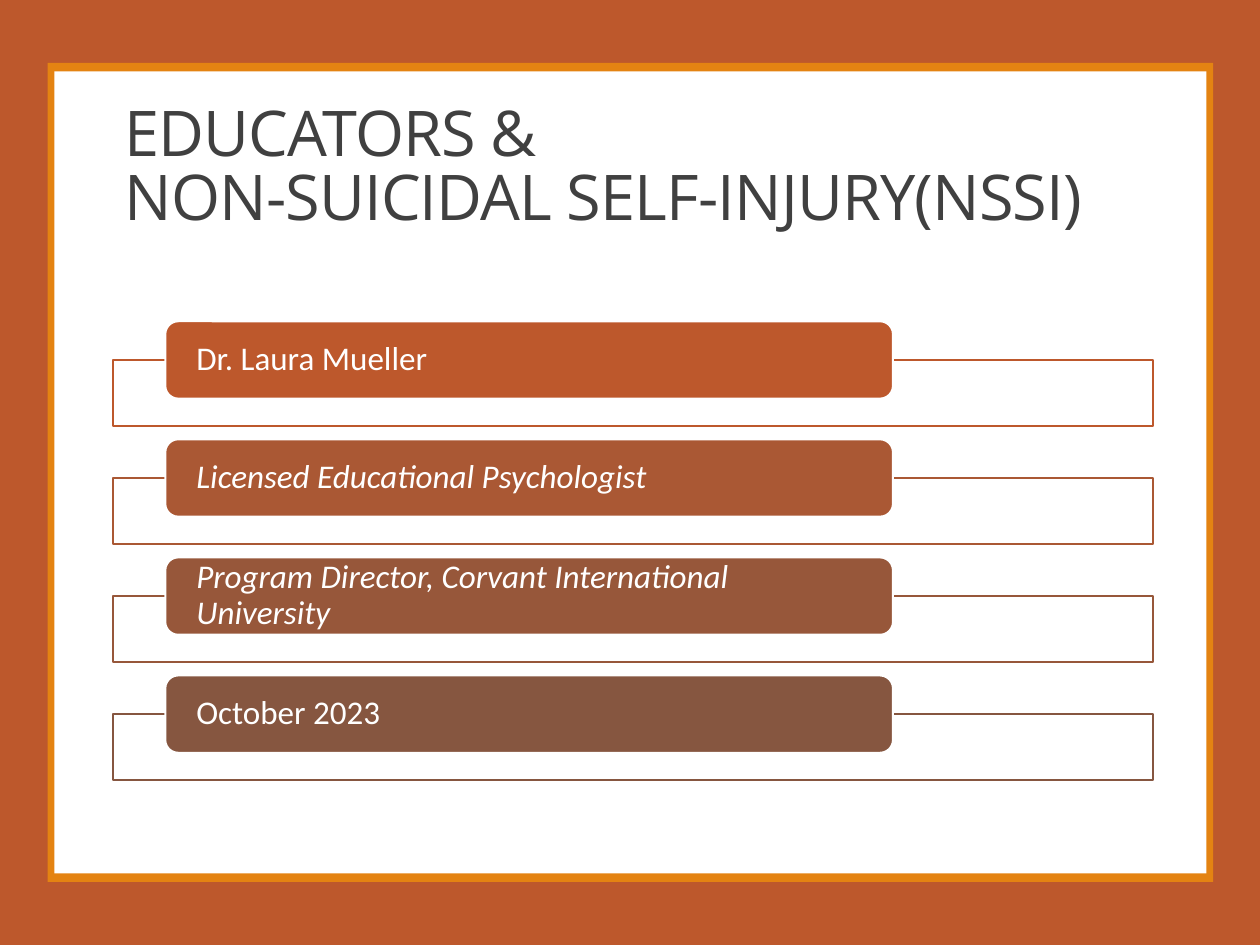
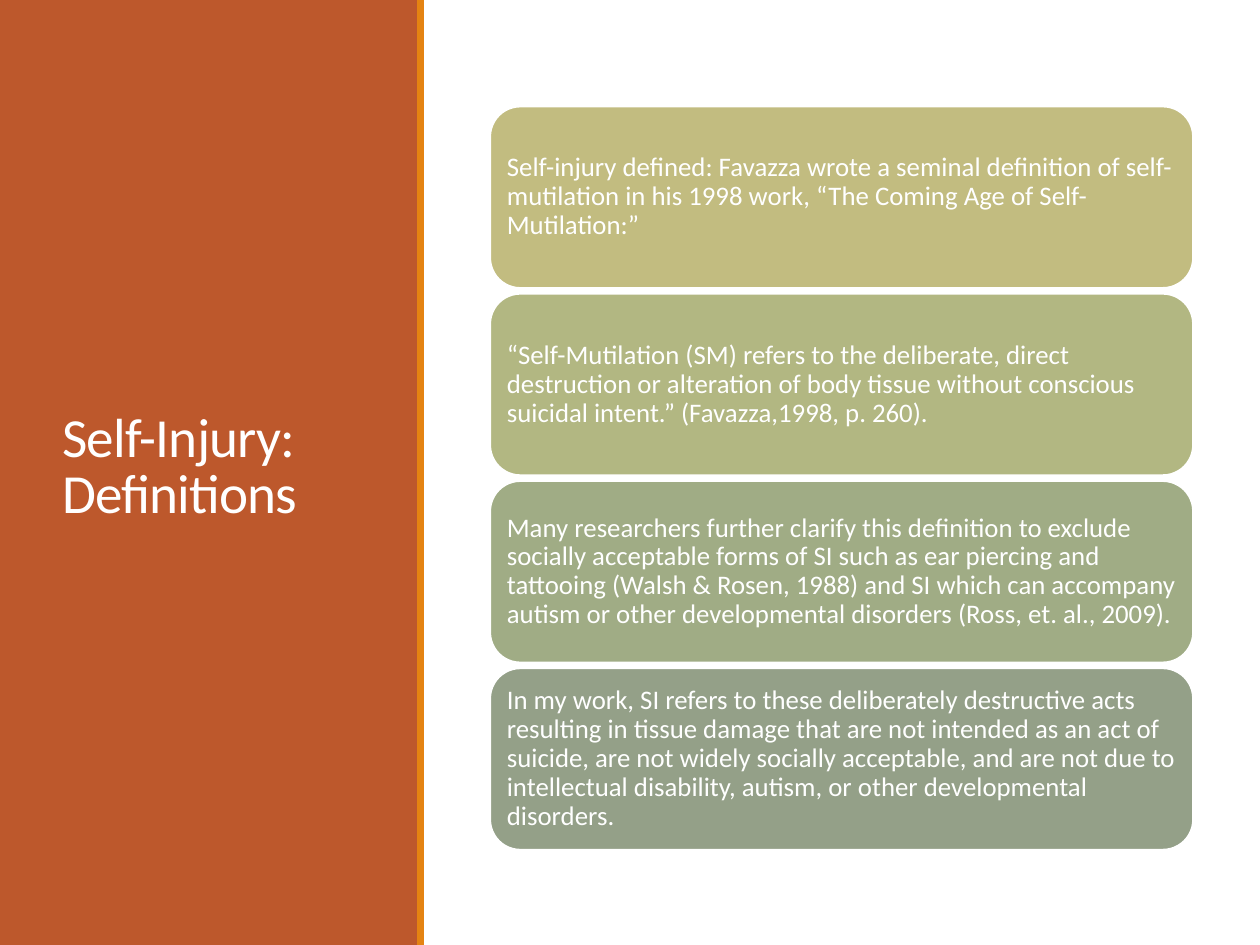
from dataclasses import dataclass

from pptx import Presentation, util as u
from pptx.dml.color import RGBColor
from pptx.enum import shapes, text

COLUMNS, ROWS = 100, 75  # square grid cells across and down the slide
CELL = u.Inches(1) / 9


@dataclass(frozen=True)
class Theme:
    rust: str = "BD582C"
    orange: str = "E48312"
    white: str = "FFFFFF"
    ink: str = "404040"
    tabs: tuple = ("BD582C", "AA5834", "97573A", "865640")
    cards: tuple = ("C2BC80", "B2B782", "A0AC85", "94A088")
    body_font: str = "Calibri"
    cover_font: str = "Open Sans"
    cover_size: int = 40
    title_size: int = 35
    tab_size: int = 21
    card_size: int = 17
    outline: float = 1.25
    title_leading: float = 0.85
    body_leading: float = 0.9
    title_tracking: int = -50


THEME = Theme()


@dataclass(frozen=True)
class Box:
    """A rectangle measured in grid cells."""
    left: float
    top: float
    width: float
    height: float

    def share(self, left, top, width, height):
        """Return the area given as shares of this box."""
        return Box(self.left + left * self.width, self.top + top * self.height,
                   width * self.width, height * self.height)

    def inset(self, across, down):
        return Box(self.left + across, self.top + down,
                   self.width - 2 * across, self.height - 2 * down)

    def rows(self, count, gap):
        height = (self.height - gap * (count - 1)) / count
        return [Box(self.left, self.top + i * (height + gap), self.width, height)
                for i in range(count)]

    def emu(self):
        return [round(v * CELL) for v in (self.left, self.top, self.width, self.height)]


SLIDE = Box(0, 0, COLUMNS, ROWS)


def add_block(page, box, fill, line=None, kind=shapes.MSO_SHAPE.RECTANGLE):
    block = page.shapes.add_shape(kind, *box.emu())
    block.shadow.inherit = False
    block.fill.solid()
    block.fill.fore_color.rgb = RGBColor.from_string(fill)
    if line:
        block.line.color.rgb = RGBColor.from_string(line)
        block.line.width = u.Pt(THEME.outline)
    else:
        block.line.fill.background()
    return block


def write(shape, words, size, color, font, leading, anchor):
    frame = shape.text_frame
    frame.word_wrap = True
    frame.vertical_anchor = anchor
    frame.text = words
    para = frame.paragraphs[0]
    para.alignment = text.PP_ALIGN.LEFT
    para.line_spacing = leading
    para.font.size = u.Pt(size)
    para.font.name = font
    para.font.color.rgb = RGBColor.from_string(color)
    return para


def add_title(page, box, words, size, color, font, anchor):
    title = page.shapes.add_textbox(*box.emu())
    para = write(title, words, size, color, font, THEME.title_leading, anchor)
    for span in para.runs:
        span._r.get_or_add_rPr().set("spc", str(THEME.title_tracking))


def add_label(page, box, words, fill, size, side, ends):
    """Add a rounded block of white text with the given margins in inches."""
    label = add_block(page, box, fill, THEME.white, shapes.MSO_SHAPE.ROUNDED_RECTANGLE)
    frame = label.text_frame
    frame.margin_left = frame.margin_right = u.Inches(side)
    frame.margin_top = frame.margin_bottom = u.Inches(ends)
    return write(label, words, size, THEME.white, THEME.body_font,
                 THEME.body_leading, text.MSO_ANCHOR.MIDDLE)


def add_tab_list(page, box, entries):
    """Add outlined bars, each with a tab overlapping its top edge."""
    rows = box.rows(len(entries), gap=1.08)
    for row, color, (words, italic) in zip(rows, THEME.tabs, entries):
        add_block(page, row.share(0, 0.37, 1, 0.63), THEME.white, color)
        para = add_label(page, row.share(0.05, 0, 0.7, 0.74), words, color,
                         THEME.tab_size, side=0.24, ends=0)
        para.font.italic = italic


def add_cards(page, box, entries):
    for row, color, words in zip(box.rows(len(entries), gap=0.45), THEME.cards, entries):
        add_label(page, row, words, color, THEME.card_size, side=0.07, ends=0.07)


def build_cover(page, title, entries):
    panel = Box(3.78, 5, 92.5, 65)
    add_block(page, SLIDE, THEME.rust)
    add_block(page, panel, THEME.orange)
    add_block(page, panel.inset(0.54, 0.67), THEME.white)
    add_title(page, Box(9, 3.15, 82.5, 15.85), title, THEME.cover_size,
              THEME.ink, THEME.cover_font, text.MSO_ANCHOR.BOTTOM)
    add_tab_list(page, Box(9, 25.5, 82.5, 36.4), entries)


def build_side_title(page, title, entries):
    add_block(page, Box(0, 0, 33.2, ROWS), THEME.rust)
    add_title(page, Box(4.05, 5.67, 25.3, 63.1), title, THEME.title_size,
              THEME.white, THEME.body_font, text.MSO_ANCHOR.MIDDLE)
    add_block(page, Box(33.1, 0, 0.55, ROWS), THEME.orange)
    add_cards(page, Box(38.9, 8.45, 55.8, 59), entries)


COVER_ENTRIES = [
    ("Dr. Laura Mueller", False),
    ("Licensed Educational Psychologist", True),
    ("Program Director, Corvant International University", True),
    ("October 2023", False),
]

DEFINITIONS = [
    "Self-injury defined: Favazza wrote a seminal definition of self-mutilation "
    "in his 1998 work, “The Coming Age of Self-Mutilation:”",
    "“Self-Mutilation (SM) refers to the deliberate, direct destruction or alteration "
    "of body tissue without conscious suicidal intent.” (Favazza,1998, p. 260).",
    "Many researchers further clarify this definition to exclude socially acceptable "
    "forms of SI such as ear piercing and tattooing (Walsh & Rosen, 1988) and SI which "
    "can accompany autism or other developmental disorders (Ross, et. al., 2009).",
    "In my work, SI refers to these deliberately destructive acts resulting in tissue "
    "damage that are not intended as an act of suicide, are not widely socially "
    "acceptable, and are not due to intellectual disability, autism, or other "
    "developmental disorders.",
]


def main():
    deck = Presentation()
    deck.slide_width, deck.slide_height = SLIDE.emu()[2:]
    blank = deck.slide_layouts[6]
    build_cover(deck.slides.add_slide(blank),
                "EDUCATORS &\vNON-SUICIDAL SELF-INJURY(NSSI)", COVER_ENTRIES)
    build_side_title(deck.slides.add_slide(blank),
                     "Self-Injury:\vDefinitions", DEFINITIONS)
    deck.save("out.pptx")


if __name__ == "__main__":
    main()
